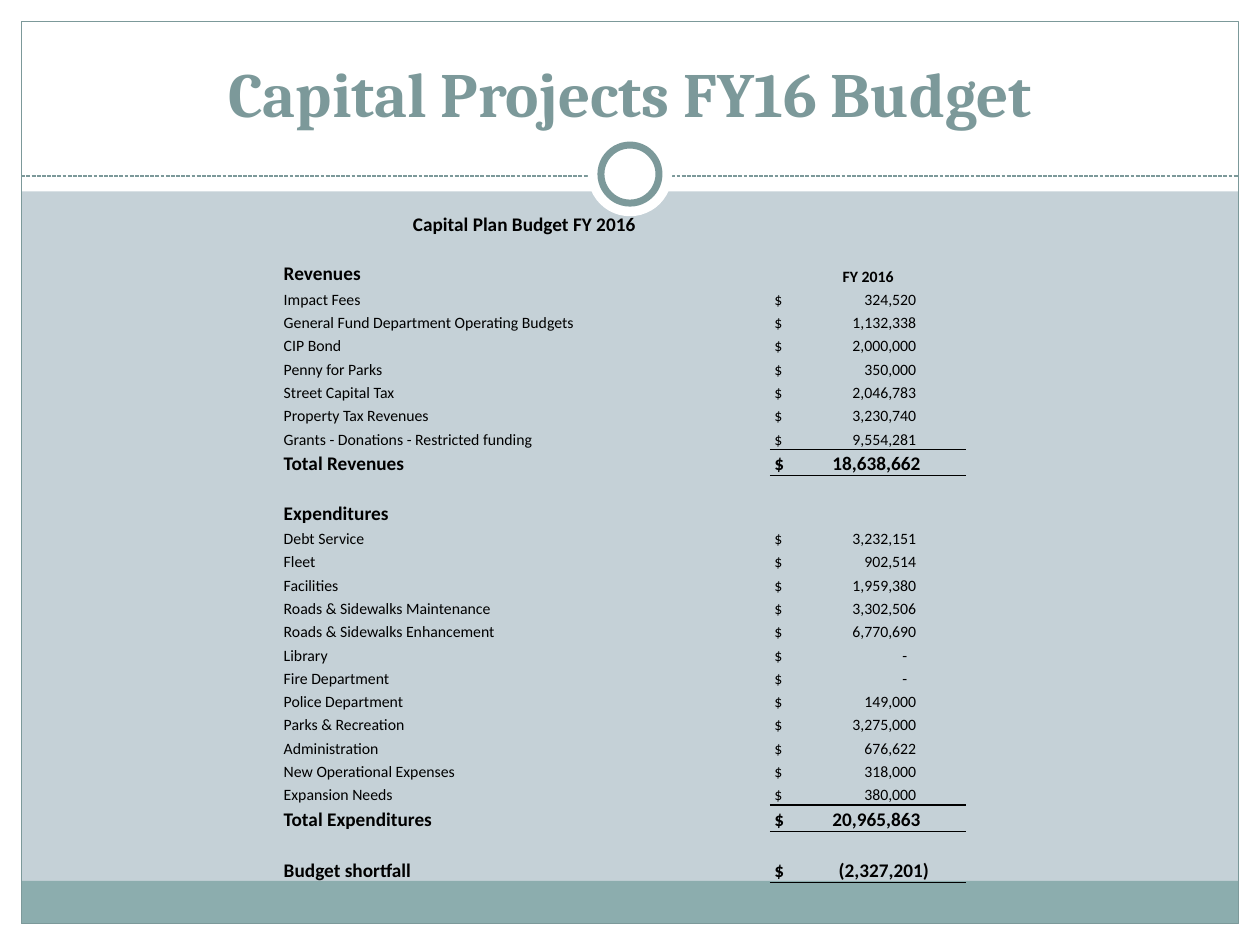
from dataclasses import dataclass

from lxml.etree import SubElement
from pptx import Presentation
from pptx.dml.color import RGBColor
from pptx.enum.dml import MSO_LINE_DASH_STYLE as Dash
from pptx.enum.shapes import MSO_CONNECTOR as Connector, MSO_SHAPE as Preset
from pptx.enum.text import MSO_ANCHOR as Anchor, PP_ALIGN as Align
from pptx.oxml import parse_xml
from pptx.oxml.ns import nsdecls, qn
from pptx.util import Cm, Pt

COLORS = {"page": "C5D1D7", "white": "FFFFFF", "band": "8CADAE",
          "accent": "7C999A", "ink": "000000"}
PLAIN_TABLE = "{2D5ABB26-0587-4C30-8999-92F81FD0307C}"

REVENUES = [
    ("Impact Fees", "324,520"),
    ("General Fund Department Operating Budgets", "1,132,338"),
    ("CIP Bond", "2,000,000"),
    ("Penny for Parks", "350,000"),
    ("Street Capital Tax", "2,046,783"),
    ("Property Tax Revenues", "3,230,740"),
    ("Grants - Donations - Restricted funding", "9,554,281"),
]
EXPENDITURES = [
    ("Debt Service", "3,232,151"),
    ("Fleet", "902,514"),
    ("Facilities", "1,959,380"),
    ("Roads & Sidewalks Maintenance", "3,302,506"),
    ("Roads & Sidewalks Enhancement", "6,770,690"),
    ("Library", "-"),
    ("Fire Department", "-"),
    ("Police Department", "149,000"),
    ("Parks & Recreation", "3,275,000"),
    ("Administration", "676,622"),
    ("New Operational Expenses", "318,000"),
    ("Expansion Needs", "380,000"),
]


@dataclass
class Box:
    left: float
    top: float
    width: float
    height: float

    def lengths(self):
        return Cm(self.left), Cm(self.top), Cm(self.width), Cm(self.height)


def color(name):
    return RGBColor.from_string(COLORS[name])


def add_preset(page, preset, box, fill=None, line=None, weight=0.75):
    shape = page.shapes.add_shape(preset, *box.lengths())
    shape.shadow.inherit = False
    if fill:
        shape.fill.solid()
        shape.fill.fore_color.rgb = color(fill)
    else:
        shape.fill.background()
    if line:
        shape.line.color.rgb = color(line)
        shape.line.width = Pt(weight)
    else:
        shape.line.fill.background()


def add_frame(page, box, margin=0.43, header=3.86, footer=0.86):
    right, bottom = box.left + box.width, box.top + box.height
    inner = Box(box.left + margin, box.top + margin,
                box.width - 2 * margin, box.height - 2 * margin)
    for edge in (Box(box.left, bottom - margin, box.width, margin),
                 Box(box.left, box.top, box.width, header),
                 Box(box.left, box.top, margin, box.height),
                 Box(right - margin, box.top, margin, box.height)):
        add_preset(page, Preset.RECTANGLE, edge, "white")
    add_preset(page, Preset.RECTANGLE,
               Box(inner.left, bottom - margin - footer, inner.width, footer), "band")
    add_preset(page, Preset.RECTANGLE, inner, line="accent")


def add_divider(page, box):
    middle = box.top + box.height / 2
    rule = page.shapes.add_connector(Connector.STRAIGHT, Cm(box.left), Cm(middle + 0.04),
                                     Cm(box.left + box.width), Cm(middle + 0.04))
    rule.line.color.rgb = color("accent")
    rule.line.width = Pt(0.75)
    rule.line.dash_style = Dash.SQUARE_DOT
    SubElement(rule._element.spPr, qn("a:effectLst"))
    center = box.left + box.width / 2
    for size, line in ((box.height, None), (1.17, "accent")):
        add_preset(page, Preset.OVAL,
                   Box(center - size / 2, middle - size / 2, size, size), "white", line, 4)


def style_span(span, font, size, tint, bold):
    span.font.name = font
    span.font.size = Pt(size)
    span.font.bold = bold
    span.font.color.rgb = color(tint)


def add_title(page, box, text):
    frame = page.shapes.add_textbox(*box.lengths()).text_frame
    frame.word_wrap = True
    frame.vertical_anchor = Anchor.BOTTOM
    para = frame.paragraphs[0]
    para.text = text
    para.alignment = Align.CENTER
    style_span(para.runs[0], "Cambria", 36, "accent", True)


def set_tab(para, position):
    tabs = SubElement(para._p.get_or_add_pPr(), qn("a:tabLst"))
    SubElement(tabs, qn("a:tab"), pos=str(Cm(position)), algn="r")


def set_border(cell, side):
    cell._tc.get_or_add_tcPr().insert(0, parse_xml(
        f'<a:{side} {nsdecls("a")} w="12700"><a:solidFill>'
        f'<a:srgbClr val="{COLORS["ink"]}"/></a:solidFill></a:{side}>'))


def fill_cell(cell, text, size, bold, align=None):
    cell.fill.background()
    cell.vertical_anchor = Anchor.BOTTOM
    cell.margin_left = cell.margin_right = cell.margin_top = cell.margin_bottom = 0
    para = cell.text_frame.paragraphs[0]
    if not text:
        SubElement(para._p, qn("a:endParaRPr"), sz=str(size * 100))
        return
    para.text = text
    para.alignment = align
    style_span(para.runs[0], "Calibri", size, "ink", bold)


def fill_amount(cell, amount, size, bold):
    fill_cell(cell, f"$\t{amount}", size, bold)
    cell.margin_left = Cm(0.09)
    tab = 2.95 if bold else 2.86
    if amount.startswith("("):
        tab = 3.12
    elif amount == "-":
        tab = 2.68
    set_tab(cell.text_frame.paragraphs[0], tab)


def budget_rows():
    gap = ("gap", "", "")
    yield "title", "Capital Plan Budget FY 2016", ""
    yield gap
    yield "heading", "Revenues", "FY 2016"
    yield from (("item", *entry) for entry in REVENUES)
    yield "total", "Total Revenues", "18,638,662"
    yield gap
    yield "heading", "Expenditures", ""
    yield from (("item", *entry) for entry in EXPENDITURES)
    yield "total", "Total Expenditures", "20,965,863"
    yield gap
    yield "shortfall", "Budget shortfall", "(2,327,201)"


def add_budget(page, box):
    rows = list(budget_rows())
    table = page.shapes.add_table(len(rows), 3, *box.lengths()).table
    table.first_row = table.horz_banding = False
    table._tbl.tblPr.find(qn("a:tableStyleId")).text = PLAIN_TABLE
    for column, width in zip(table.columns, (9.7, 0.1, box.width - 9.8)):
        column.width = Cm(width)
    heights = {"item": 0.47, "gap": 0.47, "shortfall": 0.56}
    for index, (kind, label, value) in enumerate(rows):
        table.rows[index].height = Cm(heights.get(kind, 0.53))
        name, spacer, amount = (table.cell(index, column) for column in range(3))
        bold = kind not in ("item", "gap")
        size = 11 if bold else 9
        fill_cell(name, label, size, bold, Align.CENTER if kind == "title" else None)
        fill_cell(spacer, "", 9, False)
        if kind in ("item", "total", "shortfall"):
            fill_amount(amount, value, size, bold)
        else:
            fill_cell(amount, value, 9, True, Align.CENTER)
        if kind == "total":
            set_border(table.cell(index - 1, 2), "lnB")
            set_border(amount, "lnT")
        elif kind == "shortfall":
            set_border(amount, "lnB")


def main():
    deck = Presentation()
    deck.slide_width, deck.slide_height = Cm(25.4), Cm(19.05)
    page = deck.slides.add_slide(deck.slide_layouts[6])
    page.background.fill.solid()
    page.background.fill.fore_color.rgb = color("page")
    add_frame(page, Box(0, 0, 25.4, 19.05))
    add_divider(page, Box(0.43, 2.66, 24.54, 1.7))
    add_title(page, Box(0.85, 0.64, 23.7, 2.1), "Capital Projects FY16 Budget")
    add_budget(page, Box(5.72, 4.24, 13.76, 13.55))
    deck.save("out.pptx")


if __name__ == "__main__":
    main()
